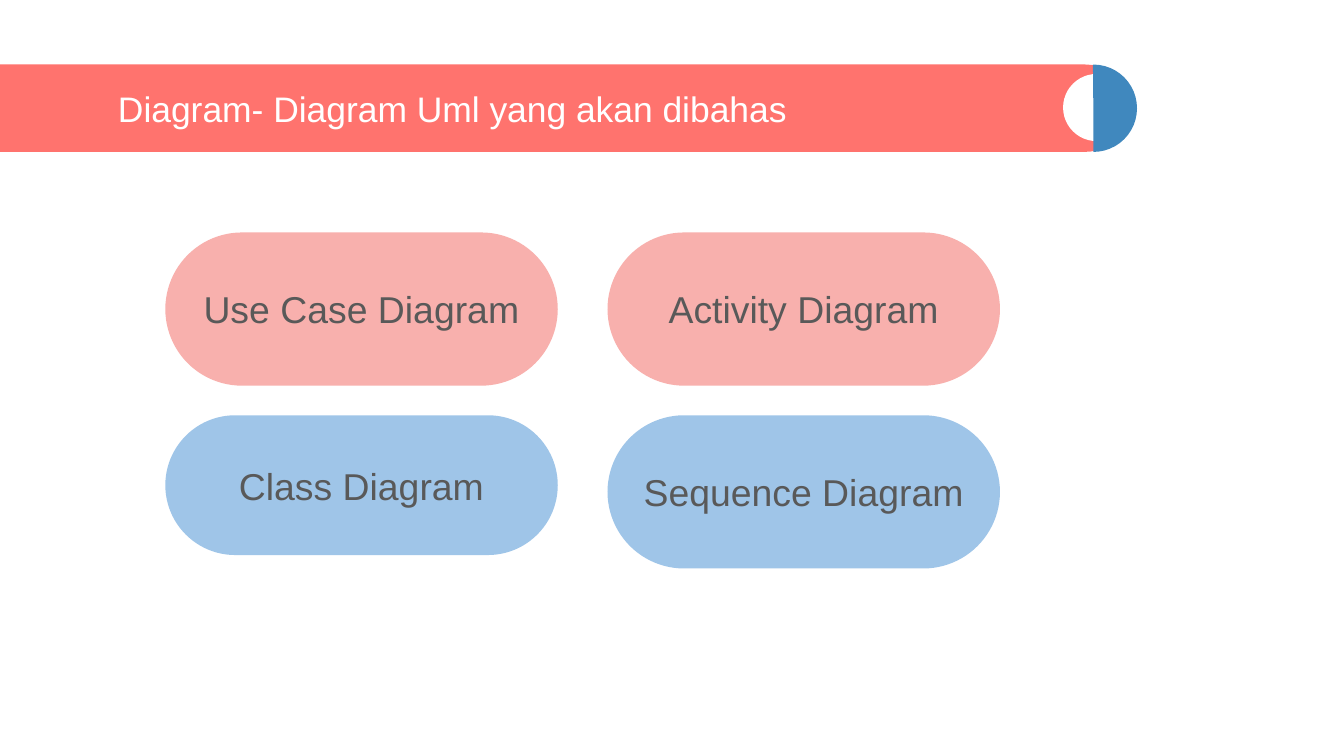
from dataclasses import dataclass

from pptx import Presentation
from pptx.dml.color import RGBColor
from pptx.enum.shapes import MSO_SHAPE
from pptx.enum.text import MSO_ANCHOR, PP_ALIGN
from pptx.shapes.autoshape import Shape
from pptx.slide import Slide
from pptx.util import Emu, Pt

EMU_PER_PX = 4572  # 200 px to the inch
INSET = 20
COLORS = {
    "white": "FFFFFF",
    "coral": "FF736E",
    "blue": "4088BE",
    "pink": "F8B0AD",
    "sky": "9FC5E8",
    "gray": "595959",
}


@dataclass(frozen=True)
class Box:
    left: int
    top: int
    width: int
    height: int

    def emu(self) -> tuple[Emu, ...]:
        return tuple(px(n) for n in (self.left, self.top, self.width, self.height))


@dataclass(frozen=True)
class Ornament:
    kind: MSO_SHAPE
    box: Box
    color: str
    adjustments: tuple[float, ...] = ()
    rotation: int = 0


@dataclass(frozen=True)
class Topic:
    label: str
    column: int
    row: int
    color: str
    height: int = 228


def px(length: int) -> Emu:
    return Emu(length * EMU_PER_PX)


def rgb(name: str) -> RGBColor:
    return RGBColor.from_string(COLORS[name])


def write(shape: Shape, text: str, *, size: int, color: str,
          align: PP_ALIGN = PP_ALIGN.LEFT) -> None:
    frame = shape.text_frame
    frame.word_wrap = True
    frame.vertical_anchor = MSO_ANCHOR.MIDDLE
    frame.margin_left = frame.margin_right = px(INSET)
    frame.margin_top = frame.margin_bottom = px(INSET)
    paragraph = frame.paragraphs[0]
    paragraph.alignment = align
    run = paragraph.add_run()
    run.text = text
    run.font.name = "Arial"
    run.font.size = Pt(size)
    run.font.color.rgb = rgb(color)


def draw_ornament(slide: Slide, ornament: Ornament) -> Shape:
    shape = slide.shapes.add_shape(ornament.kind, *ornament.box.emu())
    shape.shadow.inherit = False
    shape.fill.solid()
    shape.fill.fore_color.rgb = rgb(ornament.color)
    shape.line.fill.background()
    shape.rotation = ornament.rotation
    for index, value in enumerate(ornament.adjustments):
        shape.adjustments[index] = value
    return shape


def draw_topic(slide: Slide, topic: Topic) -> None:
    box = Box(GRID_LEFT + topic.column * COLUMN_STEP,
              GRID_TOP + topic.row * ROW_STEP, TOPIC_WIDTH, topic.height)
    pill = draw_ornament(
        slide, Ornament(MSO_SHAPE.ROUNDED_RECTANGLE, box, topic.color, (0.5,)))
    write(pill, topic.label, size=20, color="gray", align=PP_ALIGN.CENTER)


# Title banner with its round end
BANNER = [
    Ornament(MSO_SHAPE.ROUNDED_RECTANGLE, Box(-64, 96, 1744, 130), "coral", (0.5,)),
    Ornament(MSO_SHAPE.OVAL, Box(1582, 110, 100, 100), "white", rotation=180),
    Ornament(MSO_SHAPE.PIE, Box(1562, 96, 130, 130), "blue", (53.67, 162), 180),
]
TITLE_BOX = Box(156, 120, 1394, 82)

# Grid of diagram topics
GRID_LEFT, GRID_TOP = 246, 346
COLUMN_STEP, ROW_STEP = 658, 272
TOPIC_WIDTH = 584
TOPICS = [
    Topic("Use Case Diagram", 0, 0, "pink"),
    Topic("Class Diagram", 0, 1, "sky", height=208),
    Topic("Activity Diagram", 1, 0, "pink"),
    Topic("Sequence Diagram", 1, 1, "sky"),
]


def main() -> None:
    deck = Presentation()
    deck.slide_width, deck.slide_height = px(2000), px(1125)
    slide = deck.slides.add_slide(deck.slide_layouts[6])

    for ornament in BANNER:
        draw_ornament(slide, ornament)
    title = slide.shapes.add_textbox(*TITLE_BOX.emu())
    write(title, "Diagram- Diagram Uml yang akan dibahas", size=19, color="white")

    for topic in TOPICS:
        draw_topic(slide, topic)
    deck.save("out.pptx")


if __name__ == "__main__":
    main()
